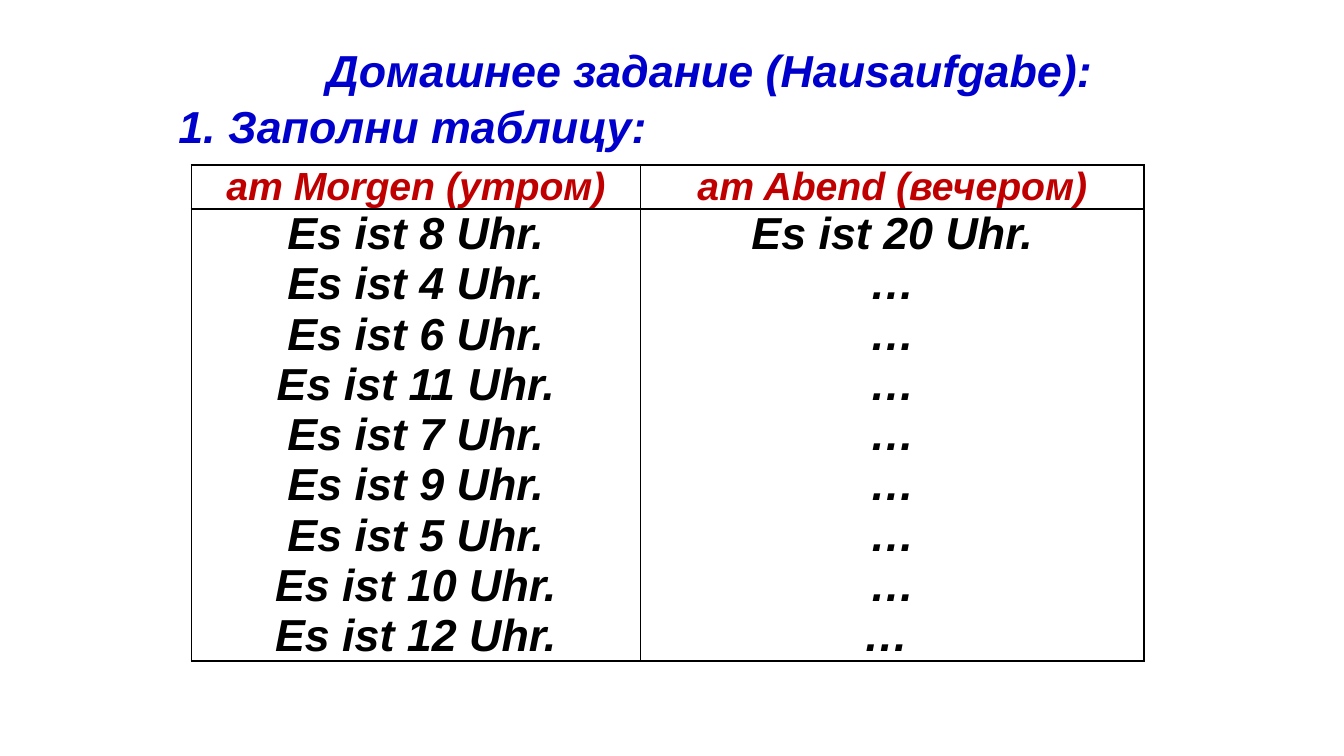
from dataclasses import dataclass

from lxml import etree
from pptx import Presentation
from pptx import util as u
from pptx.dml.color import RGBColor
from pptx.enum import text
from pptx.oxml.ns import qn


@dataclass(frozen=True)
class Theme:
    """Colours, font and type sizes of the slide."""
    font: str = "Arial"
    heading: str = "0000CC"
    column_head: str = "C00000"
    ink: str = "000000"
    large: int = 32
    medium: int = 28
    outer_line: float = 1.5
    inner_line: float = 1


THEME = Theme()
HOURS = (8, 4, 6, 11, 7, 9, 5, 10, 12)
MORNING = [f"Es ist {hour} Uhr." for hour in HOURS]
EVENING = ["Es ist 20 Uhr."] + ["…"] * (len(HOURS) - 2) + ["… "]


def write_lines(frame, lines, size, colour, align):
    """Write each line as a bold italic paragraph and return the paragraphs."""
    for index, line in enumerate(lines):
        paragraph = frame.paragraphs[0] if index == 0 else frame.add_paragraph()
        paragraph.alignment = align
        run = paragraph.add_run()
        run.text = line
        run.font.name = THEME.font
        run.font.size = u.Pt(size)
        run.font.bold = run.font.italic = True
        run.font.color.rgb = RGBColor.from_string(colour)
    return frame.paragraphs


def set_borders(cell, widths):
    """Draw the cell's left, right, top and bottom borders in ink."""
    properties = cell._tc.get_or_add_tcPr()
    for position, (side, width) in enumerate(zip("LRTB", widths)):
        border = etree.Element(qn(f"a:ln{side}"), w=str(u.Pt(width)))
        fill = etree.SubElement(border, qn("a:solidFill"))
        etree.SubElement(fill, qn("a:srgbClr"), val=THEME.ink)
        properties.insert(position, border)


def add_heading(slide, left, top, width, height):
    """Place the homework heading and its task, the first line indented."""
    frame = slide.shapes.add_textbox(*map(u.Inches, (left, top, width, height))).text_frame
    frame.word_wrap = True
    frame.vertical_anchor = text.MSO_ANCHOR.TOP
    frame.margin_top = u.Inches(0.11)
    title, task = write_lines(
        frame, ["Домашнее задание (Hausaufgabe):", "1. Заполни таблицу:"],
        THEME.large, THEME.heading, text.PP_ALIGN.LEFT)
    title._p.get_or_add_pPr().set("indent", str(u.Inches(1.47)))
    task.space_before = u.Pt(2)


def add_times_table(slide, left, top, columns, rows):
    """Place the morning and evening table with the given column and row sizes."""
    box = map(u.Inches, (left, top, sum(columns), sum(rows)))
    table = slide.shapes.add_table(len(rows), len(columns), *box).table
    table.horz_banding = table.first_row = False
    for column, width in zip(table.columns, columns):
        column.width = u.Inches(width)
    for row, height in zip(table.rows, rows):
        row.height = u.Inches(height)
    contents = (
        ([["am Morgen (утром)"], ["am Abend (вечером)"]], THEME.medium, THEME.column_head),
        ([MORNING, EVENING], THEME.large, THEME.ink),
    )
    outer, inner = THEME.outer_line, THEME.inner_line
    edges = ((outer, inner, outer, outer), (inner, outer, outer, outer))
    for row, (cells, size, colour) in zip(table.rows, contents):
        for cell, lines, widths in zip(row.cells, cells, edges):
            cell.margin_left = cell.margin_right = u.Inches(0.05)
            cell.margin_top = cell.margin_bottom = 0
            cell.fill.background()
            write_lines(cell.text_frame, lines, size, colour, text.PP_ALIGN.CENTER)
            set_borders(cell, widths)


def main():
    """Build the homework slide."""
    deck = Presentation()
    deck.slide_width, deck.slide_height = u.Inches(13.33), u.Inches(7.5)
    slide = deck.slides.add_slide(deck.slide_layouts[6])
    add_times_table(slide, 1.9, 1.64, columns=(4.45, 5), rows=(0.43, 4.48))
    add_heading(slide, 1.67, 0.31, 10, 1.48)
    deck.save("out.pptx")


if __name__ == "__main__":
    main()
